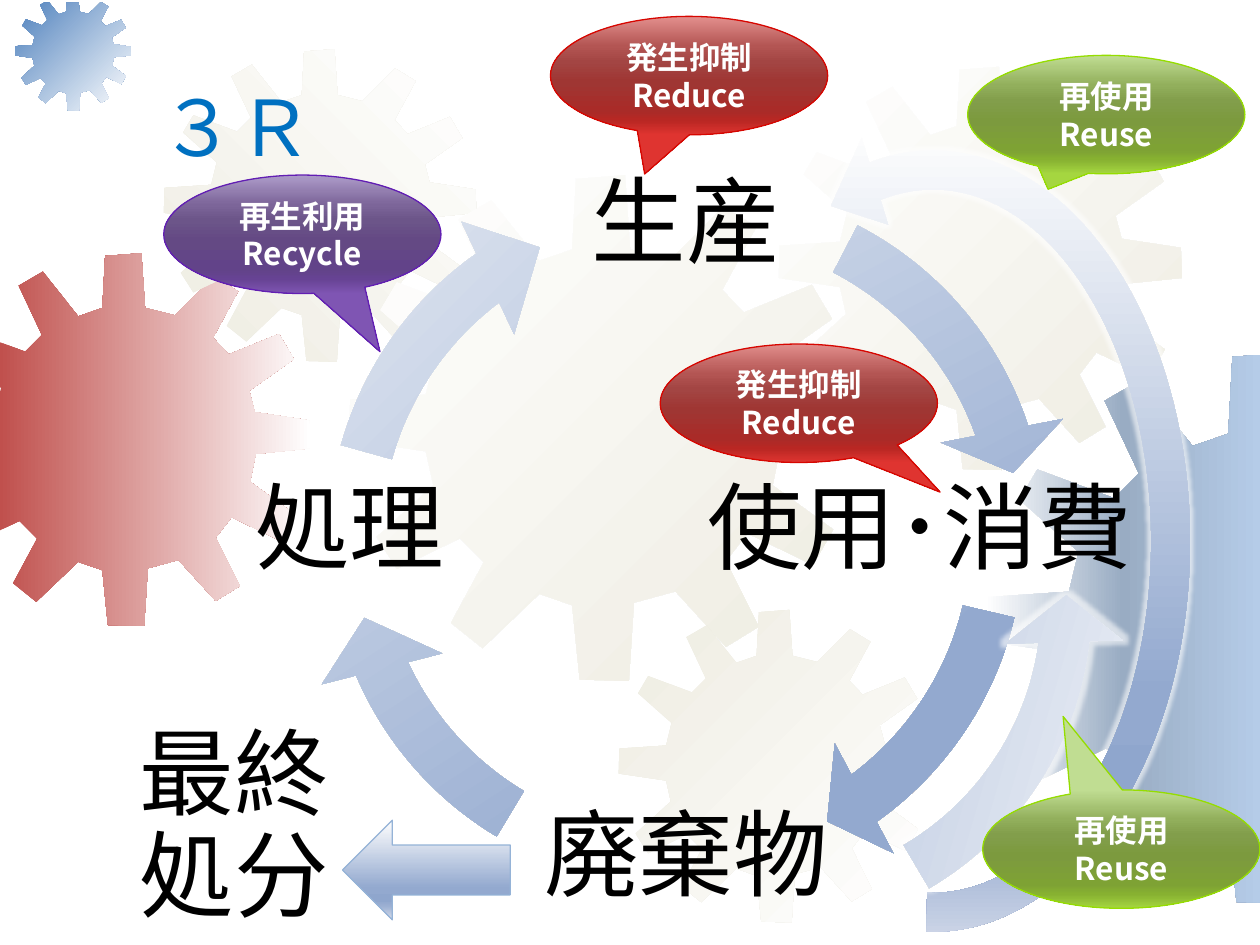
from lxml import etree
from pptx import Presentation
from pptx.dml.color import RGBColor
from pptx.enum import shapes, text
from pptx.oxml import ns
from pptx.util import Pt

WIDTH, HEIGHT = 720, 540
JP_FONT = "Noto Sans CJK JP"
COLORS = {"title": "0070C0", "label": "000000", "callout": "FFFFFF", "glow": "FFFFFF",
          "red_line": "D70600", "purple_line": "621EB3", "green_line": "95DD00",
          "arrow_line": "95B3D7", "white": "FFFFFF", "sand": "EEECE1",
          "gear_red": "C0504D", "gear_blue": "4F81BD", "steel": "99ACC3", "sky": "B5CCE8"}
CALLOUT_STOPS = (0, 25, 38, 55, 80, 88, 100)
GLOSS = {
    "red": "E28E8C B35553 A34543 9F3633 A92B28 B92723 DF3430",
    "purple": "AD9BC9 7C6599 6C5589 644984 624389 674394 7F55B3",
    "green": "C0DD92 92AF5C 829E4B 7C9A3E 7EA234 87B131 A5D640",
}
ARROW_STOPS = list(zip((0, 68, 81, 86, 100), "FEFEFE 93A9CF 8FA6CD 9BAFD2 D7DDEB".split()))

# Outline of one gear on a 401-unit grid
GEAR_UNITS = 401
GEAR = [(255, 67), (223, 59), (219, 0), (180, 3), (177, 59), (151, 68), (113, 20), (87, 35),
        (112, 88), (94, 106), (38, 85), (25, 107), (68, 145), (61, 174), (1, 178), (0, 210),
        (61, 219), (67, 246), (22, 287), (38, 312), (88, 288), (107, 307), (81, 355), (106, 375),
        (151, 332), (177, 341), (183, 400), (222, 401), (226, 339), (259, 330), (299, 374),
        (325, 358), (299, 306), (316, 284), (368, 309), (384, 281), (336, 246), (342, 216),
        (401, 210), (400, 180), (341, 171), (335, 148), (383, 114), (367, 87), (313, 109),
        (296, 91), (323, 41), (297, 25)]
# left, top, size, colours, gradient angle, opacity
GEARS = [
    (-35.5, 144.7, 213, ("gear_red", "white"), 0, 100),
    (8.6, -3, 66.2, ("gear_blue", "white"), 45, 100),
    (93.6, 28.1, 178.6, ("sand", "white"), 315, 100),
    (199.4, 100.1, 289, ("white", "sand"), 45, 100),
    (0, 378, 269.3, ("white", "white"), 0, 50),
    (353.5, 348.5, 178.6, ("sand", "white"), 45, 100),
    (445, 38.2, 230.4, ("white", "sand"), 45, 100),
    (563, 201.6, 314.6, ("white", "steel", "sky"), 0, 100),
]
# box, rotation, flip, head angle, end angle, start angle (degrees), thickness of head, glow
CYCLE = (167, 88.6, 438.5, 437.8)
ARROWS = [
    ((371.5, 71.3, 323.3, 475.9), 0, "flipH", 7.75, 279.17, 89.04, 0.08, True),
    ((179.3, 86.4, 438.5, 437.8), 332.1, None, 7.76, 9.13, 325.31, 0.081, False),
    (CYCLE, 315, None, 7.76, 99.13, 58.2, 0.081, False),
    (CYCLE, 326.9, None, 9.6, 189.13, 154.1, 0.081, False),
    (CYCLE, 315, None, 10.77, 279.13, 240.53, 0.081, False),
    ((228.2, 138.2, 414.7, 414.7), 286.2, "flipV", 8.83, 279.13, 226.67, 0.081, True),
]
ANGLE_UNIT = 0.6  # adjustment value of one degree
# lines, left, top, colour, flip, tail tip
CALLOUTS = [
    (("発生抑制", "Reduce"), 314.6, 9.4, "red", None, (-0.16, 0.83)),
    (("発生抑制", "Reduce"), 377.3, 196.6, "red", "flipH", (-0.51, 0.75)),
    (("再生利用", "Recycle"), 93.6, 100.1, "purple", "flipH", (-0.28, 0.99)),
    (("再使用", "Reuse"), 553, 31.7, "green", None, (-0.21, 0.63)),
    (("再使用", "Reuse"), 561.6, 451.4, "green", None, (-0.21, -1.12)),
]
CALLOUT_SIZE = (158.4, 67.7)
LABELS = [
    ("生産", (314.6, 90, 154.8, 77.8)),
    ("使用･消費", (377.3, 264.2, 296.6, 79.9)),
    ("廃棄物", (305.3, 451.4, 173.5, 79.2)),
    ("処理", (122.4, 264.2, 154.8, 79.2)),
    ("最終処分", (60.5, 411.1, 146.9, 125.3)),
]


def points(box):
    return [Pt(value) for value in box]


def gradient(shape, stops, angle, opacity=100):
    """Give the shape a linear gradient of (percent, colour) stops."""
    shape.shadow.inherit = False
    shape.fill.background()
    old = shape._element.spPr.find(ns.qn("a:noFill"))
    fill = etree.Element(ns.qn("a:gradFill"), rotWithShape="1")
    stop_list = etree.SubElement(fill, ns.qn("a:gsLst"))
    for percent, color in stops:
        stop = etree.SubElement(stop_list, ns.qn("a:gs"), pos=str(percent * 1000))
        rgb = etree.SubElement(stop, ns.qn("a:srgbClr"), val=color)
        if opacity < 100:
            etree.SubElement(rgb, ns.qn("a:alpha"), val=str(opacity * 1000))
    etree.SubElement(fill, ns.qn("a:lin"), ang=str(angle * 60000), scaled="0")
    old.getparent().replace(old, fill)


def outline(shape, color=None):
    if color:
        shape.line.color.rgb = RGBColor.from_string(COLORS[color])
        shape.line.width = Pt(0.75)
    else:
        shape.line.fill.background()


def flip(shape, direction):
    if direction:
        shape._element.spPr.xfrm.set(direction, "1")


def glow(shape):
    effects = shape._element.spPr.find(ns.qn("a:effectLst"))
    halo = etree.SubElement(effects, ns.qn("a:glow"), rad=str(Pt(5)))
    rgb = etree.SubElement(halo, ns.qn("a:srgbClr"), val=COLORS["glow"])
    etree.SubElement(rgb, ns.qn("a:alpha"), val="60000")


def write(shape, lines, size, color, font=JP_FONT, bold=False, align=text.PP_ALIGN.CENTER):
    frame = shape.text_frame
    frame.word_wrap = True
    frame.vertical_anchor = text.MSO_ANCHOR.MIDDLE
    frame.text = "\n".join(lines)
    for paragraph in frame.paragraphs:
        paragraph.alignment = align
        style = paragraph.font
        style.name, style.size, style.bold = font, Pt(size), bold
        style.color.rgb = RGBColor.from_string(COLORS[color])
        if font == JP_FONT:
            etree.SubElement(style._rPr, ns.qn("a:ea"), typeface=font)
    return frame


def clip(polygon, axis, limit, sign):
    """Keep the part of the polygon on one side of a limit."""
    kept = []
    for a, b in zip(polygon, polygon[1:] + polygon[:1]):
        a_in, b_in = (sign * (p[axis] - limit) >= 0 for p in (a, b))
        if a_in:
            kept.append(a)
        if a_in != b_in:
            t = (limit - a[axis]) / (b[axis] - a[axis])
            kept.append(tuple(m + t * (n - m) for m, n in zip(a, b)))
    return kept


deck = Presentation()
deck.slide_width, deck.slide_height = Pt(WIDTH), Pt(HEIGHT)
parts = deck.slides.add_slide(deck.slide_layouts[6]).shapes

# Background gears, trimmed to the slide
for left, top, size, names, angle, opacity in GEARS:
    ring = [(left + x * size / GEAR_UNITS, top + y * size / GEAR_UNITS) for x, y in GEAR]
    for axis, limit, sign in ((0, 0, 1), (0, WIDTH, -1), (1, 1.5, 1), (1, HEIGHT, -1)):
        ring = clip(ring, axis, limit, sign)
    ring = [(x * 100, y * 100) for x, y in ring]
    builder = parts.build_freeform(*ring[0], scale=Pt(1) / 100)
    builder.add_line_segments(ring[1:], close=True)
    gear = builder.convert_to_shape()
    step = 100 // (len(names) - 1)
    gradient(gear, [(i * step, COLORS[name]) for i, name in enumerate(names)], angle, opacity)
    outline(gear)

# Title
title = parts.add_textbox(*points((84.2, 26.6, 612, 90)))
write(title, ["３Ｒ"], 44, "title", font="Arial", align=text.PP_ALIGN.LEFT)

# Cycle arrows
for box, rotation, direction, head, end, start, head_width, has_glow in ARROWS:
    arrow = parts.add_shape(shapes.MSO_SHAPE.CIRCULAR_ARROW, *points(box))
    arrow.rotation = rotation
    flip(arrow, direction)
    angles = [degrees * ANGLE_UNIT for degrees in (head, end, start)]
    for i, value in enumerate([0.069, *angles, head_width]):
        arrow.adjustments[i] = value
    gradient(arrow, ARROW_STOPS, 90)
    outline(arrow)
    if has_glow:
        glow(arrow)

# Arrow to final disposal
disposal = parts.add_shape(shapes.MSO_SHAPE.RIGHT_ARROW, *points((195.8, 468.7, 95.8, 56.9)))
flip(disposal, "flipH")
gradient(disposal, ARROW_STOPS, 90)
outline(disposal, "arrow_line")

# 3R callouts
for lines, left, top, hue, direction, tip in CALLOUTS:
    callout = parts.add_shape(shapes.MSO_SHAPE.OVAL_CALLOUT, *points((left, top, *CALLOUT_SIZE)))
    flip(callout, direction)
    callout.adjustments[0], callout.adjustments[1] = tip
    gradient(callout, zip(CALLOUT_STOPS, GLOSS[hue].split()), 90)
    outline(callout, hue + "_line")
    write(callout, lines, 18, "callout", bold=True)

# Stage labels
for stage, box in LABELS:
    frame = write(parts.add_textbox(*points(box)), [stage], 54, "label")
    frame.margin_left = frame.margin_right = frame.margin_top = frame.margin_bottom = Pt(5)
    frame.paragraphs[0].line_spacing = 0.9

deck.save("out.pptx")
